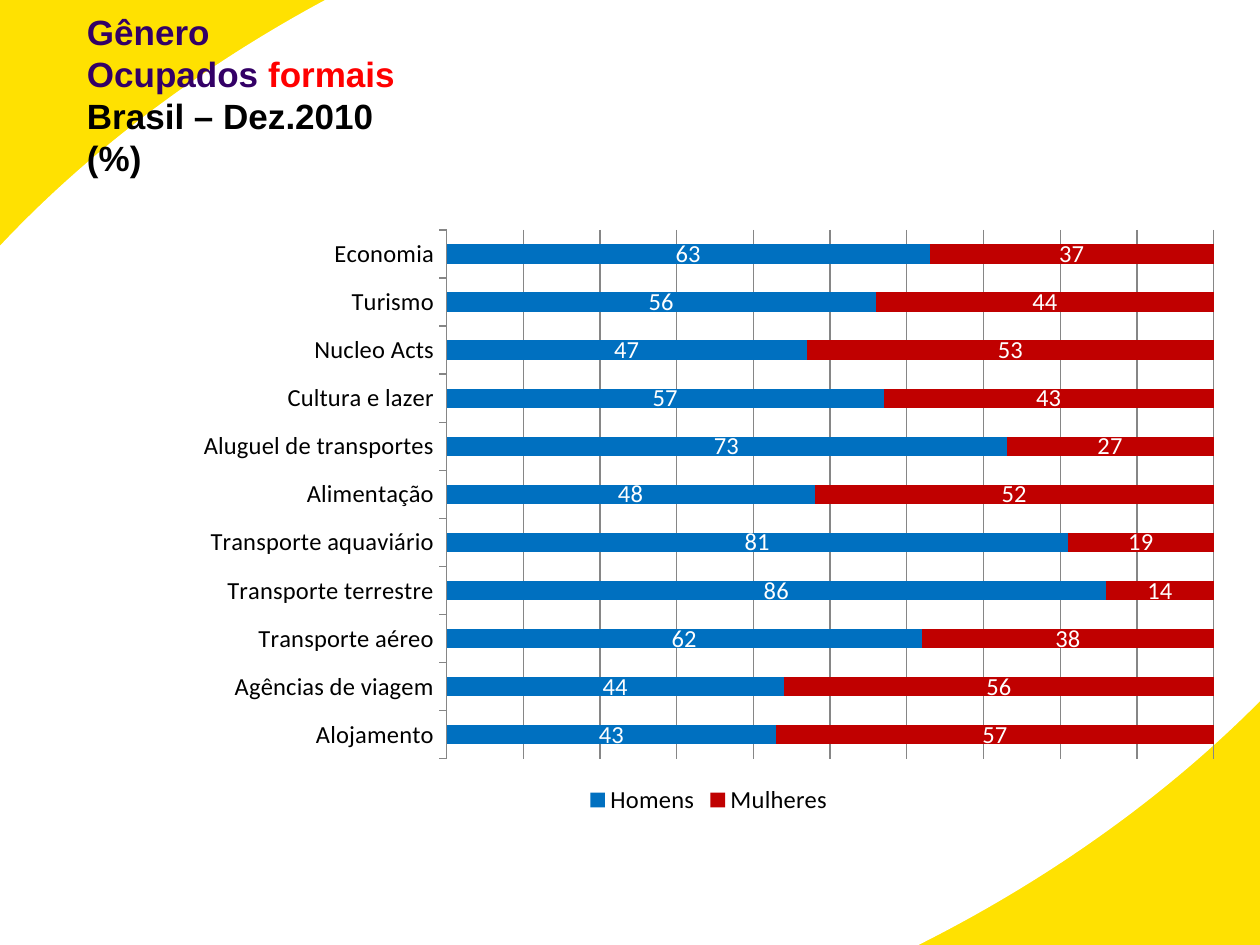
"""Builds a slide on the gender split of formal workers by tourism activity."""
import pptx
import pptx.chart.data
import pptx.dml.color
import pptx.enum.chart
import pptx.enum.shapes
import pptx.enum.text
import pptx.util

Inches, Pt = pptx.util.Inches, pptx.util.Pt
RGBColor = pptx.dml.color.RGBColor
xl = pptx.enum.chart

YELLOW = RGBColor(0xFF, 0xE1, 0x01)
WHITE = RGBColor(0xFF, 0xFF, 0xFF)
BLACK = RGBColor(0, 0, 0)
PURPLE = RGBColor(0x33, 0x00, 0x66)
RED = RGBColor(0xFF, 0, 0)
BLUE = RGBColor(0x00, 0x70, 0xC0)
DARK_RED = RGBColor(0xC0, 0, 0)
GRAY = RGBColor(0x86, 0x86, 0x86)

TITLE_LINES = [
    [("Gênero", PURPLE)],
    [("Ocupados ", PURPLE), ("formais", RED)],
    [("Brasil – Dez.2010", BLACK)],
    [("(%)", BLACK)],
]
SERIES = [("Homens", BLUE), ("Mulheres", DARK_RED)]
SHARES = [
    ("Alojamento", 43, 57),
    ("Agências de viagem", 44, 56),
    ("Transporte aéreo", 62, 38),
    ("Transporte terrestre", 86, 14),
    ("Transporte aquaviário", 81, 19),
    ("Alimentação", 48, 52),
    ("Aluguel de transportes", 73, 27),
    ("Cultura e lazer", 57, 43),
    ("Nucleo Acts", 47, 53),
    ("Turismo", 56, 44),
    ("Economia", 63, 37),
]


def add_background(s):
    s.background.fill.solid()
    s.background.fill.fore_color.rgb = YELLOW
    sp = s.shapes.add_shape(
        pptx.enum.shapes.MSO_SHAPE.OVAL,
        Inches(-2.01), Inches(-0.73), Inches(14.18), Inches(8.81))
    sp.rotation = 335.5
    sp.shadow.inherit = False
    sp.fill.solid()
    sp.fill.fore_color.rgb = WHITE
    sp.line.fill.background()
    s.shapes.element.insert(2, sp.element)


def format_title(title):
    title.left, title.top = Inches(0.59), Inches(0.6)
    title.width, title.height = Inches(8.11), Inches(0.87)
    tf = title.text_frame
    tf.word_wrap = True
    tf.auto_size = pptx.enum.text.MSO_AUTO_SIZE.NONE
    tf.vertical_anchor = pptx.enum.text.MSO_ANCHOR.BOTTOM
    p = tf.paragraphs[0]
    p.alignment = pptx.enum.text.PP_ALIGN.LEFT
    p.line_spacing = Pt(24)
    for i, line in enumerate(TITLE_LINES):
        if i:
            p.add_line_break()
        for text, color in line:
            r = p.add_run()
            r.text = text
            r.font.name, r.font.size, r.font.bold = "Arial", Pt(20), True
            r.font.color.rgb = color


def add_share_chart(s):
    data = pptx.chart.data.CategoryChartData(number_format="0")
    data.categories = [row[0] for row in SHARES]
    for i, (name, _) in enumerate(SERIES, start=1):
        data.add_series(name, [row[i] for row in SHARES])
    chart = s.shapes.add_chart(
        xl.XL_CHART_TYPE.BAR_STACKED_100,
        Inches(1.45), Inches(1.73), Inches(8.35), Inches(4.78), data).chart
    chart.has_title = False
    chart.font.name, chart.font.size = "Calibri", Pt(14)
    chart.font.color.rgb = BLACK
    chart.has_legend = True
    chart.legend.position = xl.XL_LEGEND_POSITION.BOTTOM
    chart.legend.include_in_layout = False
    chart.legend.font.size = Pt(14)

    cat_axis, val_axis = chart.category_axis, chart.value_axis
    cat_axis.major_tick_mark = xl.XL_TICK_MARK.OUTSIDE
    cat_axis.tick_labels.font.size = Pt(14)
    val_axis.visible = False
    val_axis.minimum_scale, val_axis.maximum_scale = 0, 1
    val_axis.major_unit = 0.1
    val_axis.has_major_gridlines = True
    for line in (cat_axis.format.line, val_axis.major_gridlines.format.line):
        line.color.rgb = GRAY
        line.width = Pt(0.75)

    plot = chart.plots[0]
    plot.gap_width, plot.overlap = 150, 100
    plot.vary_by_categories = False
    for series, (_, color) in zip(plot.series, SERIES):
        series.format.fill.solid()
        series.format.fill.fore_color.rgb = color
        labels = series.data_labels
        labels.show_value = True
        labels.number_format, labels.number_format_is_linked = "0", False
        labels.position = xl.XL_LABEL_POSITION.CENTER
        labels.font.size = Pt(14)
        labels.font.color.rgb = WHITE


def main():
    prs = pptx.Presentation()
    prs.slide_width, prs.slide_height = Inches(10), Inches(7.5)
    s = prs.slides.add_slide(prs.slide_layouts[5])
    add_background(s)
    format_title(s.shapes.title)
    add_share_chart(s)
    prs.save("out.pptx")


if __name__ == "__main__":
    main()
